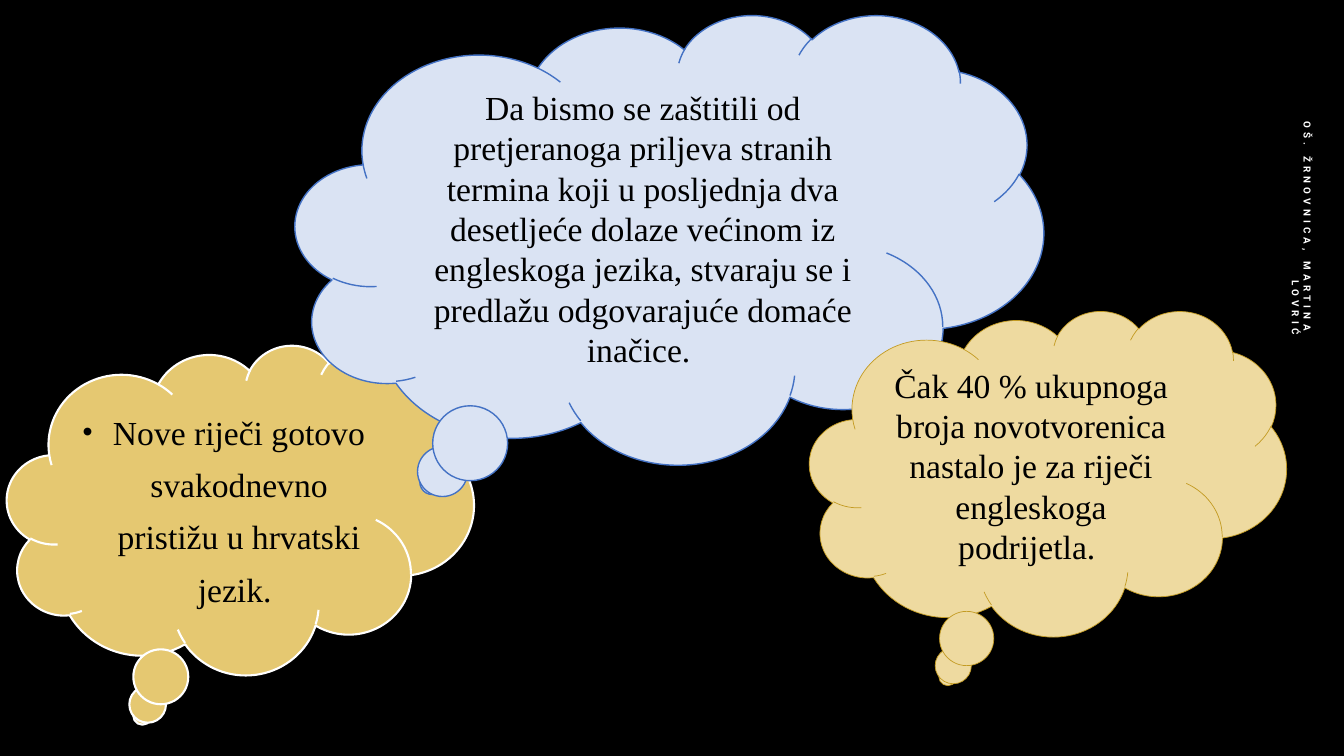
from lxml import etree
from pptx import Presentation
from pptx.dml.color import RGBColor
from pptx.enum.shapes import MSO_SHAPE as SHAPE
from pptx.enum.text import MSO_ANCHOR as ANCHOR, PP_ALIGN as ALIGN
from pptx.oxml.ns import qn
from pptx.util import Inches, Pt


def paint(color_format, hex_color):
    color_format.rgb = RGBColor.from_string(hex_color)


def write(paragraph, words, font_name, size, color):
    run = paragraph.add_run()
    run.text = words
    run.font.name = font_name
    run.font.size = Pt(size)
    paint(run.font.color, color)
    return run


deck = Presentation()
deck.slide_width, deck.slide_height = Inches(13.33), Inches(7.5)
slide = deck.slides.add_slide(deck.slide_layouts[6])
slide.background.fill.solid()
paint(slide.background.fill.fore_color, "000000")

author = slide.shapes.add_textbox(Inches(11.45), Inches(1.76), Inches(2.92), Inches(0.4))
author.rotation = 90
author_frame = author.text_frame
author_frame.word_wrap = True
author_frame.vertical_anchor = ANCHOR.MIDDLE
author_frame.margin_left = Inches(0.3)
author_line = author_frame.paragraphs[0]
author_line.alignment = ALIGN.RIGHT
author_name = write(author_line, "OŠ. ŽRNOVNICA, MARTINA LOVRIĆ", "Roboto", 7, "FFFFFF")
author_name.font.bold = True
author_name.font._element.set("spc", "300")

clouds = [
    ((0.07, 3.42, 4.63, 3.27), "E5C871", "FFFFFF", 1.5, (-0.21, 0.625),
     "Nove riječi gotovo svakodnevno pristižu u hrvatski jezik. "),
    ((2.93, 0.14, 7.42, 4.46), "DAE3F3", "4472C4", 1, (-0.317, 0.541),
     "Da bismo se zaštitili od pretjeranoga priljeva stranih termina koji u posljednja "
     "dva desetljeće dolaze većinom iz engleskoga jezika, stvaraju se i predlažu "
     "odgovarajuće domaće inačice. "),
    ((8.03, 3.08, 4.73, 3.23), "EEDAA0", "C39B23", 0.5, (-0.21, 0.625),
     "Čak 40 % ukupnoga broja novotvorenica nastalo je za riječi engleskoga podrijetla. "),
]
thoughts = []
for box, fill, outline, outline_width, tail, words in clouds:
    cloud = slide.shapes.add_shape(SHAPE.CLOUD_CALLOUT, *map(Inches, box))
    cloud.shadow.inherit = False
    cloud.adjustments[0], cloud.adjustments[1] = tail
    cloud.fill.solid()
    paint(cloud.fill.fore_color, fill)
    paint(cloud.line.color, outline)
    cloud.line.width = Pt(outline_width)
    cloud.text_frame.word_wrap = True
    cloud.text_frame.vertical_anchor = ANCHOR.TOP
    thought = cloud.text_frame.paragraphs[0]
    thought.alignment = ALIGN.CENTER
    write(thought, words, "Times New Roman", 24, "000000")
    thoughts.append(thought)

new_words = thoughts[0]
new_words.line_spacing = 1.3
new_words.space_before = Pt(10)
bullet_format = new_words._p.get_or_add_pPr()
bullet_format.set("marL", str(Inches(0.3)))
bullet_format.set("indent", str(Inches(-0.3)))
for tag, key, value in [("a:buSzPct", "val", "85000"),
                        ("a:buFont", "typeface", "Arial"),
                        ("a:buChar", "char", "•")]:
    etree.SubElement(bullet_format, qn(tag)).set(key, value)

deck.save("out.pptx")
